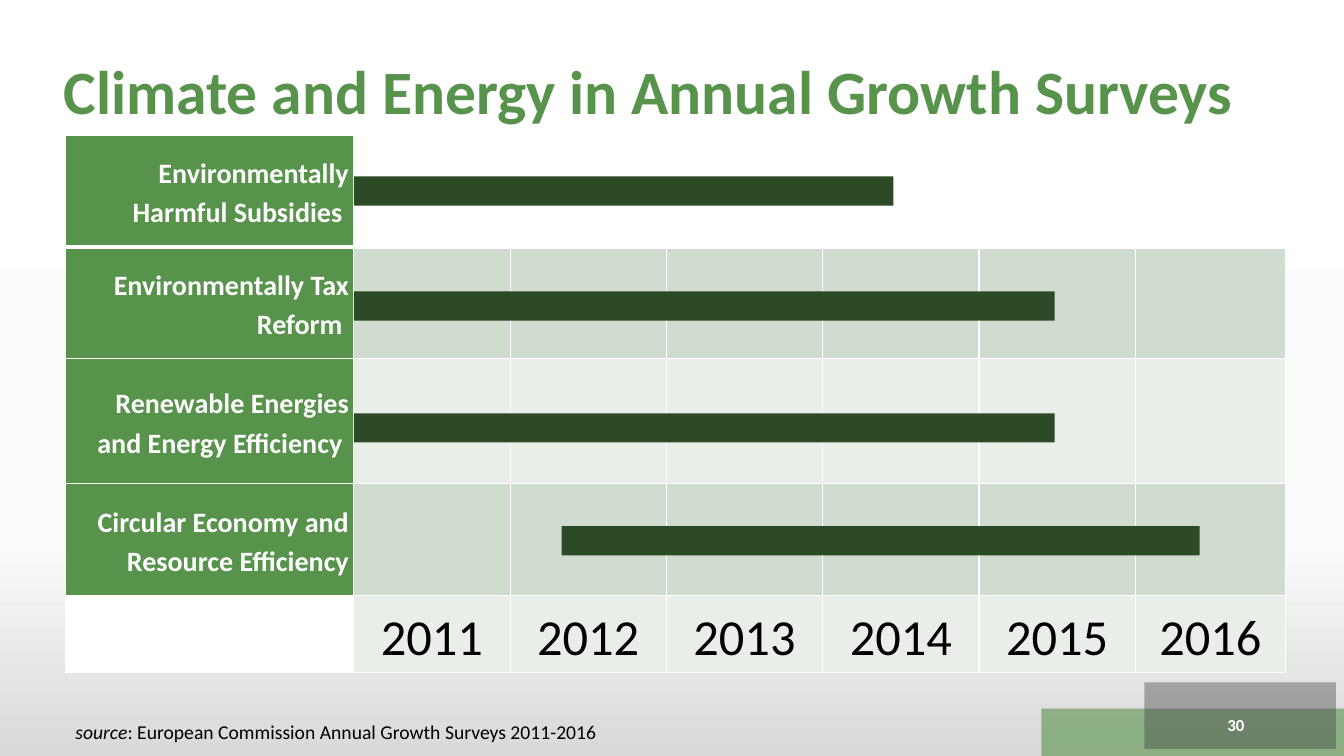
import copy
import pptx
import pptx.util
import pptx.oxml
import pptx.dml.color
import pptx.enum.text
import pptx.enum.shapes

Inches = pptx.util.Inches
Pt = pptx.util.Pt
RGB = pptx.dml.color.RGBColor
ALIGN = pptx.enum.text.PP_ALIGN
MID = pptx.enum.text.MSO_ANCHOR.MIDDLE
RECT = pptx.enum.shapes.MSO_SHAPE.RECTANGLE
NS = 'xmlns:a="http://schemas.openxmlformats.org/drawingml/2006/main"'

GREEN = RGB(0x57, 0x93, 0x4A)
DARK = RGB(0x2C, 0x4A, 0x25)
GRAY = RGB(0x3F, 0x3F, 0x3F)
SAGE = RGB(0xD1, 0xDC, 0xD0)
PALE = RGB(0xEA, 0xEE, 0xE9)
WHITE = RGB(0xFF, 0xFF, 0xFF)
BLACK = RGB(0, 0, 0)
SHADES = [WHITE, RGB(0xFB, 0xFB, 0xFB), RGB(0xD9, 0xD9, 0xD9)]


def write(para, text, size=14, color=BLACK, bold=False, italic=False, align=ALIGN.LEFT, lead=1.0, before=0):
    para.alignment = align
    para.line_spacing = lead
    para.space_before = Pt(before)
    run = para.add_run()
    run.text = text
    font = run.font
    font.name = "Calibri"
    font.size = Pt(size)
    font.bold = bold
    font.italic = italic
    font.color.rgb = color


def draw(box, color, alpha=100):
    block = slide.shapes.add_shape(RECT, *map(Inches, box))
    block.shadow.inherit = False
    block.line.fill.background()
    block.fill.solid()
    block.fill.fore_color.rgb = color
    if alpha < 100:
        tone = block.element.spPr.xpath("a:solidFill/a:srgbClr")[0]
        tone.append(pptx.oxml.parse_xml(f'<a:alpha {NS} val="{alpha * 1000}"/>'))


deck = pptx.Presentation()
deck.slide_width = Inches(13.33)
deck.slide_height = Inches(7.5)
slide = deck.slides.add_slide(deck.slide_layouts[5])

back = slide.background.fill
back.gradient()
back.gradient_angle = 270
stops = slide.element.xpath(".//a:gsLst")[0]
stops.append(copy.deepcopy(stops[-1]))
for stop, shade, place in zip(back.gradient_stops, SHADES, [0, 0.71, 1]):
    stop.color.rgb = shade
    stop.position = place

draw((10.33, 7.03, 3, 0.47), GREEN, 60)
draw((11.35, 6.77, 1.9, 0.66), GRAY, 40)

title = slide.shapes.title
title.left, title.top, title.width, title.height = map(Inches, (0.53, 0.21, 12.63, 1.45))
title.text_frame.vertical_anchor = MID
write(title.text_frame.paragraphs[0], "Climate and Energy in Annual Growth Surveys",
      size=44, color=GREEN, bold=True, lead=0.9)

topics = ["Environmentally Harmful Subsidies ", "Environmentally Tax Reform ",
          "Renewable Energies and Energy Efficiency ", "Circular Economy and Resource Efficiency"]
years = [str(year) for year in range(2011, 2017)]
fills = [WHITE, SAGE, PALE, SAGE, PALE]
widths = [2.86] + [1.55] * 5 + [1.49]
heights = [1.11, 1.11, 1.24, 1.11, 0.76]

table = slide.shapes.add_table(5, 7, *map(Inches, (0.65, 1.34, 12.09, 5.32))).table
for column, width in zip(table.columns, widths):
    column.width = Inches(width)
for r, height in enumerate(heights):
    table.rows[r].height = Inches(height)
    for c in range(len(widths)):
        cell = table.cell(r, c)
        cell.vertical_anchor = MID
        cell.margin_left = cell.margin_right = Inches(0.05)
        cell.margin_top = cell.margin_bottom = 0
        para = cell.text_frame.paragraphs[0]
        shade = fills[r]
        if c == 0:
            shade = GREEN if r < 4 else WHITE
        if c == 0 and r < 4:
            write(para, topics[r], size=20, color=WHITE, bold=True, align=ALIGN.RIGHT,
                  lead=1.15, before=12 if r else 0)
        elif c and r == 4:
            write(para, years[c - 1], size=36, align=ALIGN.CENTER, lead=1.15)
        for side in "LRTB":
            thick = 3 if (r, side) in [(0, "B"), (1, "T")] else 1
            cell._tc.get_or_add_tcPr().append(pptx.oxml.parse_xml(
                f'<a:ln{side} {NS} w="{Pt(thick)}"><a:solidFill>'
                f'<a:srgbClr val="{WHITE}"/></a:solidFill></a:ln{side}>'))
        cell.fill.solid()
        cell.fill.fore_color.rgb = shade

notes = [
    ((0.65, 7.06, 5.88, 0.4), [("source", dict(italic=True)),
                               (": European Commission Annual Growth Surveys 2011-2016", {})]),
    ((9.44, 6.99, 3, 0.4), [("30", dict(size=12, color=WHITE, bold=True, align=ALIGN.RIGHT))]),
]
for box, parts in notes:
    frame = slide.shapes.add_textbox(*map(Inches, box)).text_frame
    frame.word_wrap = True
    frame.vertical_anchor = MID
    for text, style in parts:
        write(frame.paragraphs[0], text, **style)

for left, top, width in [(3.51, 1.75, 5.35), (3.51, 2.89, 6.95), (3.51, 4.1, 6.95), (5.57, 5.22, 6.33)]:
    draw((left, top, width, 0.29), DARK)

deck.save("out.pptx")
